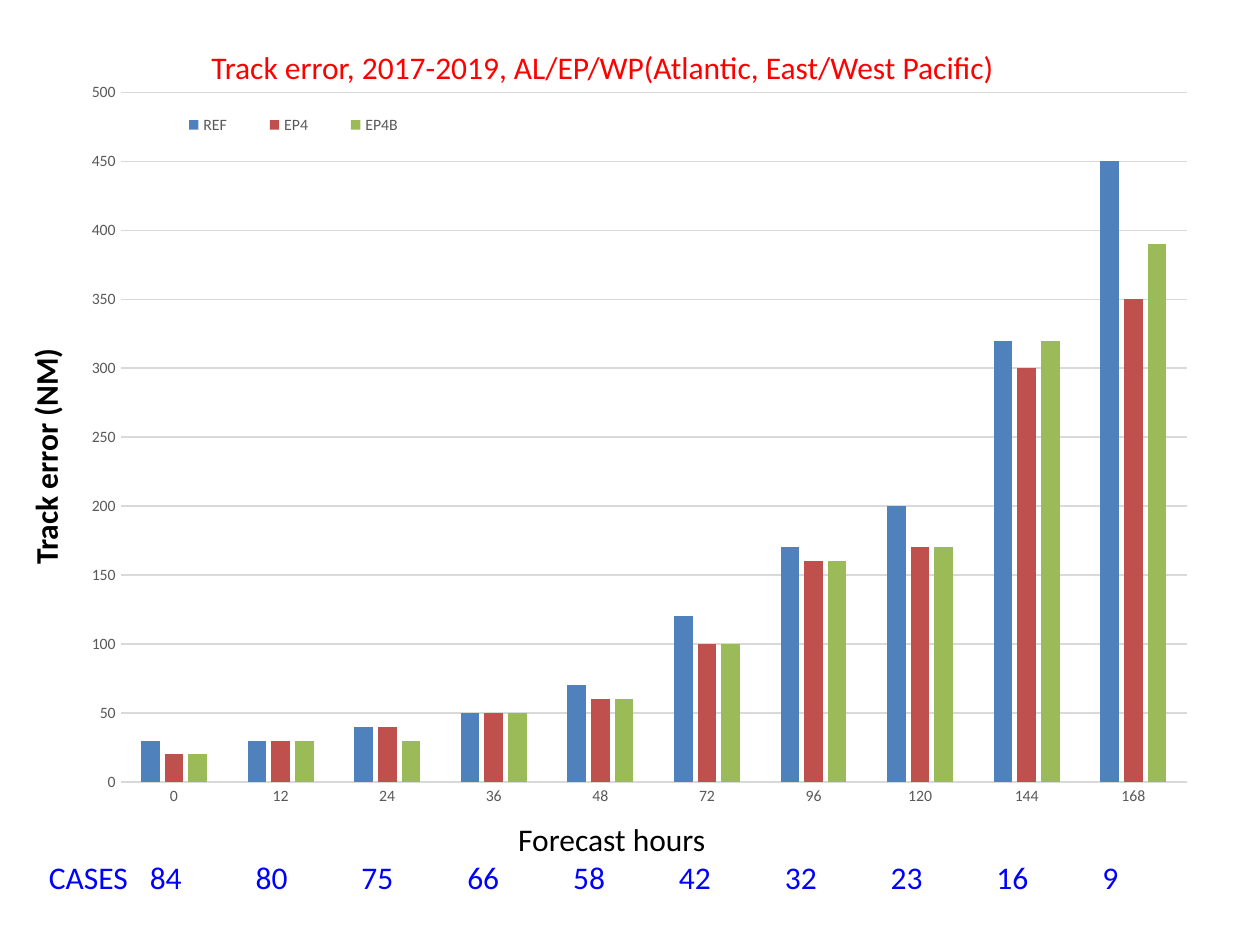
from dataclasses import dataclass

from lxml import etree
from pptx import Presentation
from pptx import util as u
from pptx.chart.data import CategoryChartData
from pptx.dml.color import RGBColor
from pptx.enum import chart as ch, text as tx
from pptx.oxml import parse_xml
from pptx.oxml.ns import nsdecls, qn

Inches, Pt = u.Inches, u.Pt


@dataclass(frozen=True)
class Theme:
    font: str = "Calibri"
    head: int = 18
    base: int = 10
    tick: int = 9
    red: str = "FF0000"
    blue: str = "0000FF"
    black: str = "000000"
    gray: str = "595959"
    grid: str = "D9D9D9"
    bars: tuple = ("4F81BD", "C0504D", "9BBB59")


THEME = Theme()
HOURS = ["0", "12", "24", "36", "48", "72", "96", "120", "144", "168"]
CASES = [84, 80, 75, 66, 58, 42, 32, 23, 16, 9]
ERRORS = {
    "REF": [30, 30, 40, 50, 70, 120, 170, 200, 320, 450],
    "EP4": [20, 30, 40, 50, 60, 100, 160, 170, 300, 350],
    "EP4B": [20, 30, 30, 50, 60, 100, 160, 170, 320, 390],
}


def style(font, size, color, bold=False):
    form = {"name": THEME.font, "size": Pt(size), "bold": bold}
    for key, val in form.items():
        setattr(font, key, val)
    font.color.rgb = RGBColor.from_string(color)


def add_text(slide, box, lines, wrap=True, turn=0):
    """Put (text, colour, bold, alignment) lines in one box; return its paragraphs."""
    shape = slide.shapes.add_textbox(*map(Inches, box))
    shape.rotation = turn
    frame = shape.text_frame
    frame.word_wrap = wrap
    frame.auto_size = tx.MSO_AUTO_SIZE.SHAPE_TO_FIT_TEXT
    for i, (words, color, bold, align) in enumerate(lines):
        para = frame.add_paragraph() if i else frame.paragraphs[0]
        para.alignment = align
        run = para.add_run()
        run.text = words
        style(run.font, THEME.head, color, bold)
    return frame.paragraphs


def set_tabs(para, stops):
    tabs = etree.SubElement(para._p.get_or_add_pPr(), qn("a:tabLst"))
    for stop in stops:
        etree.SubElement(tabs, qn("a:tab"), pos=str(Inches(stop)), algn="l")


def add_foot(slide, box):
    """Axis caption above the row of case counts."""
    row = "\t".join(["CASES", *map(str, CASES)])
    head, cases = add_text(slide, box, [
        ("Forecast hours", THEME.black, False, tx.PP_ALIGN.CENTER),
        (row, THEME.blue, False, tx.PP_ALIGN.LEFT),
    ])
    head._p.get_or_add_pPr().set("marL", str(Inches(0.05)))
    first, step = 0.8, 0.84
    set_tabs(cases, [first + step * i for i in range(len(CASES))])


def set_layout(part, place, inner=False):
    """Fix a chart part at fractions (x, y, w, h) of the chart."""
    target = '<c:layoutTarget val="inner"/>' if inner else ""
    modes = "".join(f'<c:{k}Mode val="edge"/>' for k in "xy")
    sizes = "".join(f'<c:{k} val="{v}"/>' for k, v in zip("xywh", place))
    node = parse_xml(f'<c:layout {nsdecls("c")}><c:manualLayout>{target}{modes}'
                     f'{sizes}</c:manualLayout></c:layout>')
    old = part.find(qn("c:layout"))
    if old is not None:
        part.remove(old)
    spot = part.find(qn("c:legendPos"))
    if spot is None:
        part.insert(0, node)
    else:
        spot.addnext(node)


def set_axis(axis):
    axis.major_tick_mark = axis.minor_tick_mark = ch.XL_TICK_MARK.NONE
    style(axis.tick_labels.font, THEME.tick, THEME.gray)


def set_line(line):
    line.color.rgb = RGBColor.from_string(THEME.grid)
    line.width = Pt(0.75)


def add_bars(slide, box):
    data = CategoryChartData()
    data.categories = HOURS
    for name, vals in ERRORS.items():
        data.add_series(name, vals)
    kind = ch.XL_CHART_TYPE.COLUMN_CLUSTERED
    chart = slide.shapes.add_chart(kind, *map(Inches, box), data).chart
    chart.has_title = False
    style(chart.font, THEME.base, THEME.black)

    plot = chart.plots[0]
    form = {"gap_width": 219, "overlap": -27, "vary_by_categories": False}
    for key, val in form.items():
        setattr(plot, key, val)
    for bar, color in zip(plot.series, THEME.bars):
        bar.format.fill.solid()
        bar.format.fill.fore_color.rgb = RGBColor.from_string(color)
        bar.invert_if_negative = False

    cat, val = chart.category_axis, chart.value_axis
    set_axis(cat)
    set_axis(val)
    set_line(cat.format.line)
    set_line(val.major_gridlines.format.line)
    val.format.line.fill.background()
    val.minimum_scale, val.maximum_scale, val.major_unit = 0, 500, 50

    chart.has_legend = True
    key = chart.legend
    key.position = ch.XL_LEGEND_POSITION.BOTTOM
    key.include_in_layout = True
    style(key.font, THEME.tick, THEME.gray)
    set_layout(key._element, (0.07, 0.04, 0.25, 0.06))
    area = chart._chartSpace.chart.plotArea
    set_layout(area, (0.043, 0.026, 0.938, 0.931), inner=True)


def main():
    prs = Presentation()
    prs.slide_width, prs.slide_height = Inches(10), Inches(7.5)
    slide = prs.slides.add_slide(prs.slide_layouts[6])
    left = tx.PP_ALIGN.LEFT
    title = "Track error, 2017-2019, AL/EP/WP(Atlantic, East/West Pacific)"
    add_text(slide, (1.58, 0.33, 6.5, 0.4), [(title, THEME.red, False, left)])
    add_text(slide, (-0.6, 3.41, 1.93, 0.41),
             [("Track error (NM)", THEME.black, True, left)], wrap=False, turn=270)
    add_foot(slide, (0.29, 6.46, 9.08, 0.71))
    add_bars(slide, (0.57, 0.58, 9.02, 5.88))
    prs.save("out.pptx")


if __name__ == "__main__":
    main()
